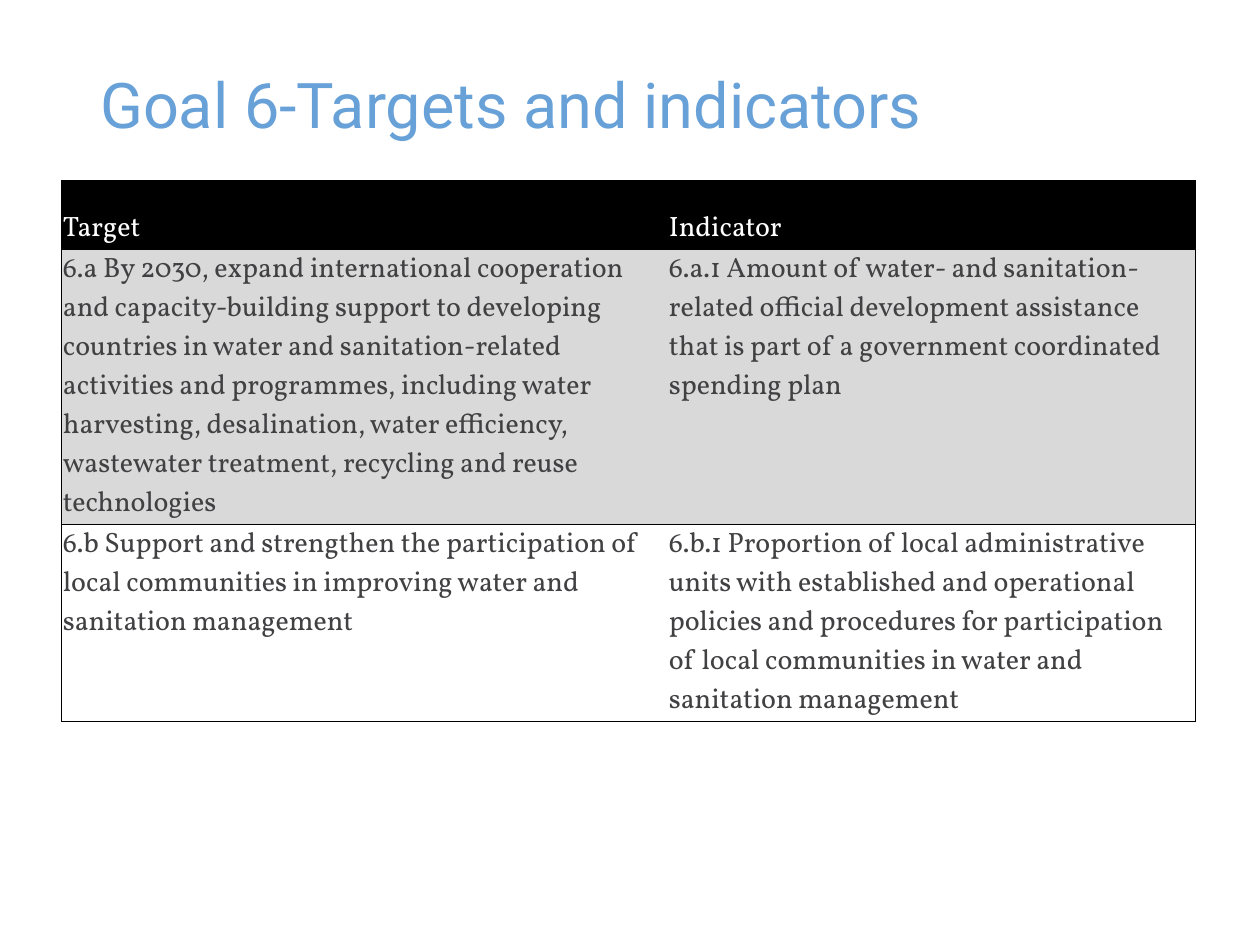
from lxml import etree
from pptx import Presentation
from pptx.dml.color import RGBColor
from pptx.enum.text import MSO_ANCHOR, MSO_AUTO_SIZE, PP_ALIGN
from pptx.oxml.ns import qn
from pptx.util import Pt

BOTTOM, TOP = MSO_ANCHOR.BOTTOM, MSO_ANCHOR.TOP
LEFT = PP_ALIGN.LEFT
NO_FIT = MSO_AUTO_SIZE.NONE

COLORS = {
    "title": "68A1D7",
    "header": "000000",
    "header_text": "FFFFFF",
    "band": "D9D9D9",
    "text": "414042",
    "border": "000000",
}
TITLE_FONT, TABLE_FONT = "Roboto", "Vollkorn"

COL_WIDTHS = [346.3, 301.7]
ROW_HEIGHTS = [39.6, 39.6, 73.4]
# Each cell is a list of paragraphs
ROWS = [
    [["Target"], ["Indicator"]],
    [
        ["6.a By 2030, expand international cooperation and capacity-building "
         "support to developing countries in water and sanitation-related "
         "activities and programmes, including water harvesting, desalination, "
         "water efficiency, wastewater treatment, recycling and reuse technologies"],
        ["6.a.1 Amount of water- and sanitation-related official development "
         "assistance that is part of a government coordinated",
         "spending plan"],
    ],
    [
        ["6.b Support and strengthen the participation of local communities in "
         "improving water and sanitation management"],
        ["6.b.1 Proportion of local administrative units with established and "
         "operational policies and procedures for participation of local "
         "communities in water and sanitation management"],
    ],
]


def rgb(name):
    return RGBColor.from_string(COLORS[name])


def style_font(p, name, size, color):
    p.font.name = name
    p.font.size = Pt(size)
    p.font.color.rgb = rgb(color)


def set_borders(cell, visible):
    tcPr = cell._tc.get_or_add_tcPr()
    for side in "LRTB":
        ln = etree.SubElement(tcPr, qn(f"a:ln{side}"), w=str(Pt(0.5)))
        if side in visible:
            fill = etree.SubElement(ln, qn("a:solidFill"))
            etree.SubElement(fill, qn("a:srgbClr"), val=COLORS["border"])
        else:
            etree.SubElement(ln, qn("a:noFill"))


def add_title(slide, left, top, width, height):
    sp = slide.shapes.title
    sp.left, sp.top, sp.width, sp.height = Pt(left), Pt(top), Pt(width), Pt(height)
    tf = sp.text_frame
    tf.text = "Goal 6-Targets and indicators"
    tf.auto_size = NO_FIT
    tf.word_wrap = True
    tf.vertical_anchor = BOTTOM
    p = tf.paragraphs[0]
    p.alignment = LEFT
    p.line_spacing = 0.9
    style_font(p, TITLE_FONT, 36, "title")


def fill_cell(cell, lines, fill, color, anchor, borders):
    cell.margin_left = cell.margin_right = cell.margin_top = Pt(0.75)
    cell.margin_bottom = 0
    cell.vertical_anchor = anchor
    set_borders(cell, borders)
    if fill:
        cell.fill.solid()
        cell.fill.fore_color.rgb = rgb(fill)
    else:
        cell.fill.background()
    cell.text_frame.text = "\n".join(lines)
    for p in cell.text_frame.paragraphs:
        style_font(p, TABLE_FONT, 16, color)


def add_targets_table(slide, left, top, width, height):
    table = slide.shapes.add_table(len(ROWS), len(COL_WIDTHS), Pt(left), Pt(top),
                                   Pt(width), Pt(height)).table
    table.first_row = table.horz_banding = False
    for col, col_width in zip(table.columns, COL_WIDTHS):
        col.width = Pt(col_width)
    for row, row_height in zip(table.rows, ROW_HEIGHTS):
        row.height = Pt(row_height)

    # Header, shaded row, plain row: fill, text colour, anchor
    styles = [("header", "header_text", BOTTOM),
              ("band", "text", TOP),
              (None, "text", TOP)]
    for i, (cells, style) in enumerate(zip(ROWS, styles)):
        for j, (lines, borders) in enumerate(zip(cells, ("LTB", "RTB"))):
            fill_cell(table.cell(i, j), lines, *style, borders)


def main():
    prs = Presentation()
    prs.slide_width, prs.slide_height = Pt(720), Pt(540)
    slide = prs.slides.add_slide(prs.slide_layouts[0])
    subtitle = slide.placeholders[1].element
    subtitle.getparent().remove(subtitle)

    add_title(slide, 50, 38, 540, 47)
    add_targets_table(slide, 35.2, 102.8, sum(COL_WIDTHS), sum(ROW_HEIGHTS))
    prs.save("out.pptx")


if __name__ == "__main__":
    main()
